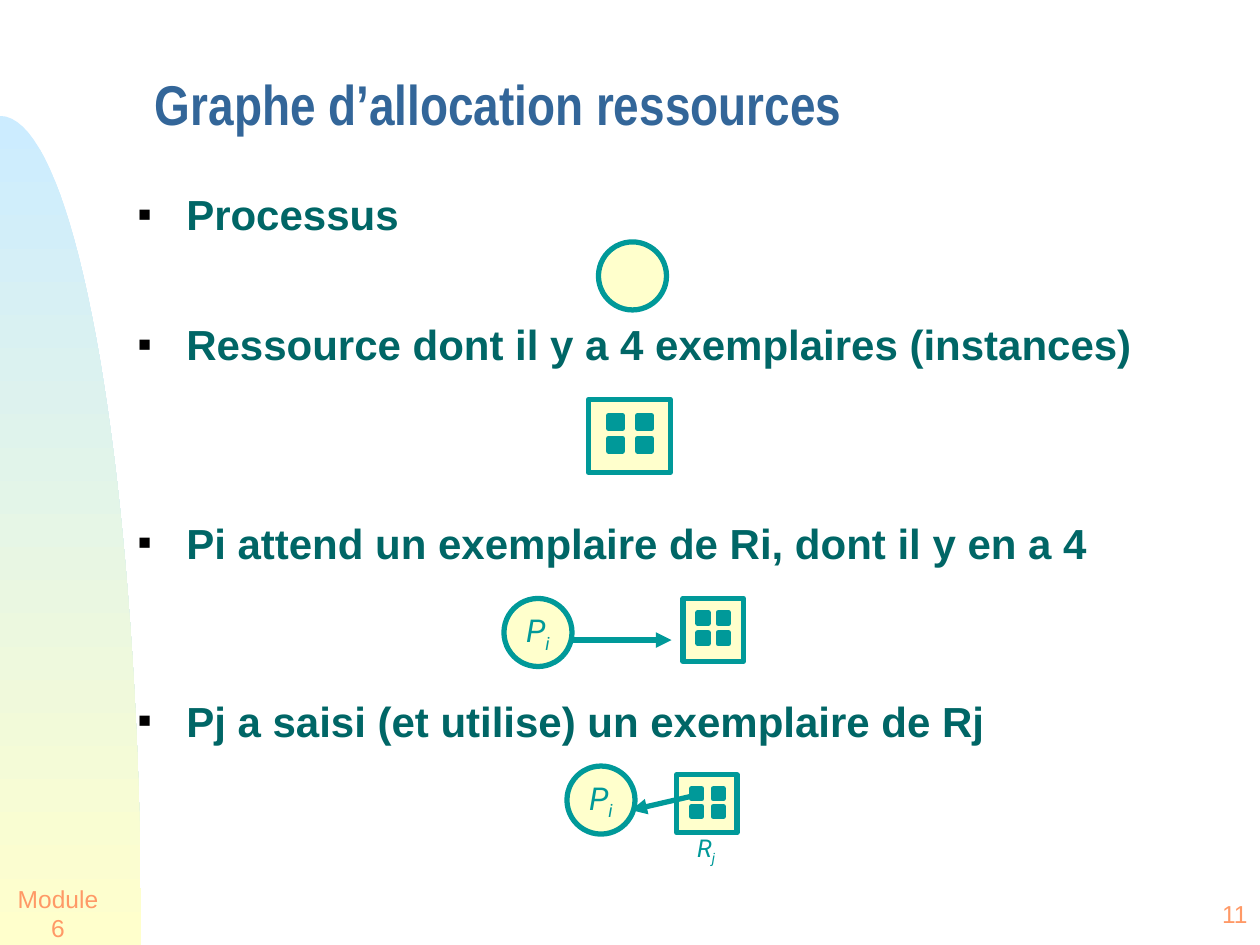
from pptx import Presentation
from pptx.dml.color import RGBColor
from pptx.enum.shapes import MSO_CONNECTOR, MSO_SHAPE
from pptx.enum.text import MSO_ANCHOR, PP_ALIGN
from pptx.oxml.ns import qn
from pptx.util import Inches, Pt
from lxml import etree

OVAL, RECTANGLE = MSO_SHAPE.OVAL, MSO_SHAPE.RECTANGLE
STRAIGHT = MSO_CONNECTOR.STRAIGHT
MIDDLE = MSO_ANCHOR.MIDDLE
LEFT, CENTER, RIGHT = PP_ALIGN.LEFT, PP_ALIGN.CENTER, PP_ALIGN.RIGHT

THEME = {
    "sky": RGBColor.from_string("CCECFF"),
    "cream": RGBColor.from_string("FFFFCC"),
    "teal": RGBColor.from_string("009999"),
    "bullet": "010000",
    "line": Pt(3),
    "title": {"name": "Arial Narrow", "size": Pt(32), "bold": True, "color": "336699"},
    "body": {"name": "Arial", "size": Pt(24), "bold": True, "color": "006666"},
    "footer": {"name": "Arial", "size": Pt(14), "color": "FF9966"},
    "process": {"name": "Roboto", "size": Pt(18), "italic": True, "color": "009999"},
    "resource": {"name": "Roboto", "size": Pt(14), "italic": True, "color": "009999"},
}


def write(paragraph, text, style, alignment=LEFT, subscript=""):
    paragraph.alignment = alignment
    for part in filter(None, (text, subscript)):
        run = paragraph.add_run()
        run.text = part
        for name, value in THEME[style].items():
            if name == "color":
                run.font.color.rgb = RGBColor.from_string(value)
            else:
                setattr(run.font, name, value)
    if subscript:
        run.font._element.set("baseline", "-25000")


def add_outlined(shapes, kind, left, top, width, height, fill):
    shape = shapes.add_shape(kind, Inches(left), Inches(top), Inches(width), Inches(height))
    shape.shadow.inherit = False
    shape.fill.solid()
    shape.fill.fore_color.rgb = THEME[fill]
    shape.line.color.rgb = THEME["teal"]
    shape.line.width = THEME["line"]
    return shape


presentation = Presentation()
presentation.slide_width = Inches(10)
presentation.slide_height = Inches(7.5)
slide = presentation.slides.add_slide(presentation.slide_layouts[5])
shapes = slide.shapes

# Curved band on the left, a cubic curve sampled at equal steps
curve = [(0, 0.92), (0.62, 0.92), (1.12, 3.87), (1.12, 7.5)]
steps = 40
points = []
for step in range(steps + 1):
    t = step / steps
    weights = ((1 - t) ** 3, 3 * t * (1 - t) ** 2, 3 * t ** 2 * (1 - t), t ** 3)
    points.append(tuple(
        Inches(sum(weight * point[axis] for weight, point in zip(weights, curve)))
        for axis in (0, 1)
    ))
builder = shapes.build_freeform(*points[0])
builder.add_line_segments(points[1:] + [(0, Inches(7.5))], close=True)
band = builder.convert_to_shape()
band.shadow.inherit = False
band.line.fill.background()
band.fill.gradient()
band.fill.gradient_angle = 270
for stop, color in zip(band.fill.gradient_stops, ("sky", "cream")):
    stop.color.rgb = THEME[color]

# Title
title = shapes.title
title.left, title.top, title.width, title.height = map(Inches, (1.13, 0.36, 8.62, 1.05))
title.text_frame.vertical_anchor = MIDDLE
title_paragraph = title.text_frame.paragraphs[0]
title_paragraph.line_spacing = 0.7
write(title_paragraph, "Graphe d’allocation ressources", "title")

# Bulleted statements, spaced to leave room for the diagrams
statements = [
    ("Processus", 0),
    ("Ressource dont il y a 4 exemplaires (instances)", 45.5),
    ("Pi attend un exemplaire de Ri, dont il y en a 4", 84.5),
    ("Pj a saisi (et utilise) un exemplaire de Rj", 73),
]
body = shapes.add_textbox(Inches(1), Inches(1.45), Inches(8.62), Inches(5.18)).text_frame
body.word_wrap = True
for index, (text, space) in enumerate(statements):
    paragraph = body.add_paragraph() if index else body.paragraphs[0]
    paragraph.space_before = Pt(space)
    write(paragraph, text, "body")
    properties = paragraph._p.get_or_add_pPr()
    properties.set("marL", str(Inches(0.38)))
    properties.set("indent", str(-Inches(0.38)))
    bullet_color = etree.SubElement(properties, qn("a:buClr"))
    etree.SubElement(bullet_color, qn("a:srgbClr"), val=THEME["bullet"])
    etree.SubElement(properties, qn("a:buSzPct"), val="50000")
    etree.SubElement(properties, qn("a:buFont"), typeface="Arial")
    etree.SubElement(properties, qn("a:buChar"), char="■")

# Processes
for left, top, name in ((4.75, 1.92, ""), (4, 4.75, "P"), (4.5, 6.08, "P")):
    process = add_outlined(shapes, OVAL, left, top, 0.54, 0.54, "cream")
    if name:
        process.text_frame.word_wrap = False
        process.text_frame.vertical_anchor = MIDDLE
        write(process.text_frame.paragraphs[0], name, "process", CENTER, "i")

# Resources: frame, first instance, instance size, distance between instances
resources = [
    ((4.67, 3.17, 0.65, 0.58), (4.83, 3.3), (0.11, 0.1), (0.23, 0.18)),
    ((5.42, 4.75, 0.48, 0.5), (5.54, 4.86), (0.08, 0.09), (0.16, 0.16)),
    ((5.37, 6.15, 0.48, 0.46), (5.49, 6.26), (0.08, 0.08), (0.17, 0.14)),
]
for frame, (left, top), size, (step_x, step_y) in resources:
    group = shapes.add_group_shape()
    add_outlined(group.shapes, RECTANGLE, *frame, "cream")
    for row in range(2):
        for column in range(2):
            add_outlined(group.shapes, RECTANGLE, left + column * step_x,
                         top + row * step_y, *size, "teal")

# Request and allocation arrows
for ends in ((4.53, 5.08, 5.33, 5.08), (5.53, 6.31, 5.01, 6.43)):
    arrow = shapes.add_connector(STRAIGHT, *map(Inches, ends))
    arrow.line.color.rgb = THEME["teal"]
    arrow.line.width = THEME["line"]
    etree.SubElement(arrow.line._get_or_add_ln(), qn("a:tailEnd"), type="triangle")
    etree.SubElement(arrow._element.spPr, qn("a:effectLst"))

# Resource label and footer
labels = [
    ((5.42, 6.58, 0.37, 0.33), "R", "resource", CENTER, "j"),
    ((0, 7, 0.92, 0.5), "Module 6", "footer", CENTER, ""),
    ((9.3, 7, 0.7, 0.5), "11", "footer", RIGHT, ""),
]
for box, text, style, alignment, subscript in labels:
    label = shapes.add_textbox(*map(Inches, box)).text_frame
    label.word_wrap = False
    label.vertical_anchor = MIDDLE
    write(label.paragraphs[0], text, style, alignment, subscript)

presentation.save("out.pptx")
